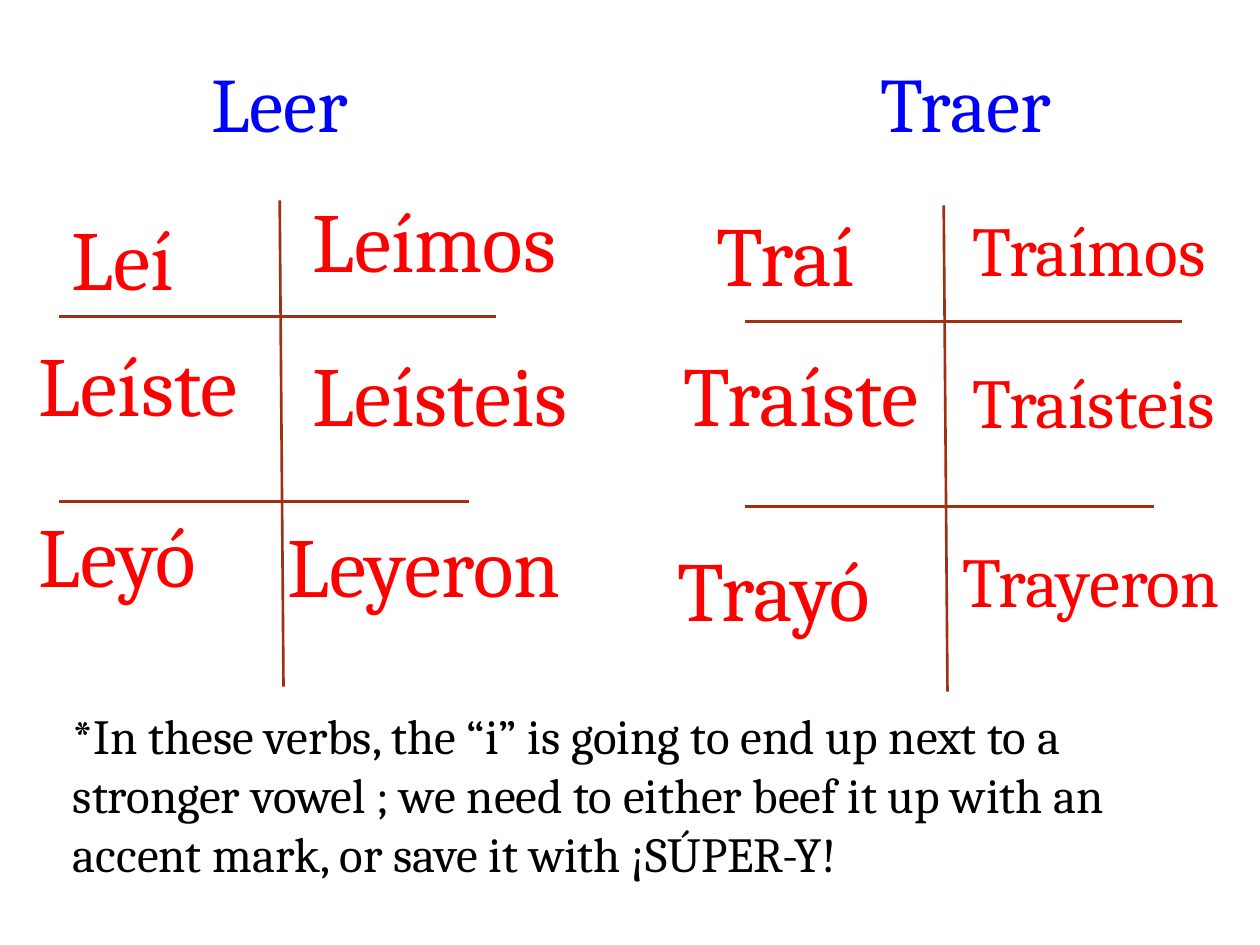
from lxml import etree
from pptx import Presentation
from pptx import util as u
from pptx.dml import color
from pptx.enum import shapes, text
from pptx.oxml import ns

BLUE, RED, BROWN, BLACK = "0000FF", "FF0000", "9F3011", "000000"


def rgb(value):
    return color.RGBColor.from_string(value)


def write(box, words, size, ink, align=text.PP_ALIGN.LEFT):
    frame = box.text_frame
    frame.word_wrap = True
    frame.auto_size = text.MSO_AUTO_SIZE.SHAPE_TO_FIT_TEXT
    frame.vertical_anchor = text.MSO_ANCHOR.TOP
    para = frame.paragraphs[0]
    para.text = words
    para.alignment = align
    para.font.name = "Cambria"
    para.font.size = u.Pt(size)
    para.font.color.rgb = rgb(ink)


deck = Presentation()
deck.slide_width, deck.slide_height = u.Inches(10), u.Inches(7.5)
page = deck.slides.add_slide(deck.slide_layouts[5])

leer = page.shapes.title
leer.left, leer.top = u.Inches(0.88), u.Inches(0.39)
leer.width, leer.height = u.Inches(2.68), u.Inches(0.84)
traer = page.shapes.add_textbox(u.Inches(6.45), u.Inches(0.39), u.Inches(2.43), u.Inches(0.84))
for heading, verb in ((leer, "Leer"), (traer, "Traer")):
    write(heading, verb, 44, BLUE, text.PP_ALIGN.CENTER)

grid_lines = [(1.75, 0, 1.78, 3.86), (3.47, 0.92, 0, 0.92), (3.25, 2.39, 0, 2.39)]
for left, top in ((0.47, 1.59), (5.74 + 0.17, 1.63)):
    vertical_shift = -0.17 if left > 5 else 0
    for x1, y1, x2, y2 in grid_lines:
        shift = vertical_shift if y1 != y2 else 0
        line = page.shapes.add_connector(
            shapes.MSO_CONNECTOR.STRAIGHT,
            u.Inches(left + x1 + shift), u.Inches(top + y1),
            u.Inches(left + x2 + shift), u.Inches(top + y2))
        line.line.color.rgb = rgb(BROWN)
        line.line.width = u.Pt(1.5)
        etree.SubElement(line._element.spPr, ns.qn("a:effectLst"))

verb_forms = [
    ("Leí", 0.47, 1.59, 1.34, 48),
    ("Leíste", 0.21, 2.59, 2.03, 48),
    ("Leyó", 0.21, 3.95, 2.01, 48),
    ("Leímos", 2.38, 1.45, 2.6, 48),
    ("Leísteis", 2.38, 2.67, 2.37, 48),
    ("Leyeron", 2.18, 4.03, 2.76, 48),
    ("Traí", 5.59, 1.56, 1.72, 48),
    ("Traíste", 5.33, 2.67, 2.36, 48),
    ("Trayó", 5.28, 4.22, 2.34, 48),
    ("Traímos", 7.62, 1.59, 2.61, 40),
    ("Traísteis", 7.62, 2.8, 2.61, 40),
    ("Trayeron", 7.54, 4.22, 2.61, 40),
]
for form, left, top, width, size in verb_forms:
    height = 0.91 if size == 48 else 0.77
    box = page.shapes.add_textbox(u.Inches(left), u.Inches(top), u.Inches(width), u.Inches(height))
    write(box, form, size, RED)

rule = page.shapes.add_textbox(u.Inches(0.48), u.Inches(5.55), u.Inches(8.91), u.Inches(1.51))
write(rule, "*In these verbs, the “i” is going to end up next to a stronger vowel ; "
      "we need to either beef it up with an accent mark, or save it with ¡SÚPER-Y!", 28, BLACK)

deck.save("out.pptx")
